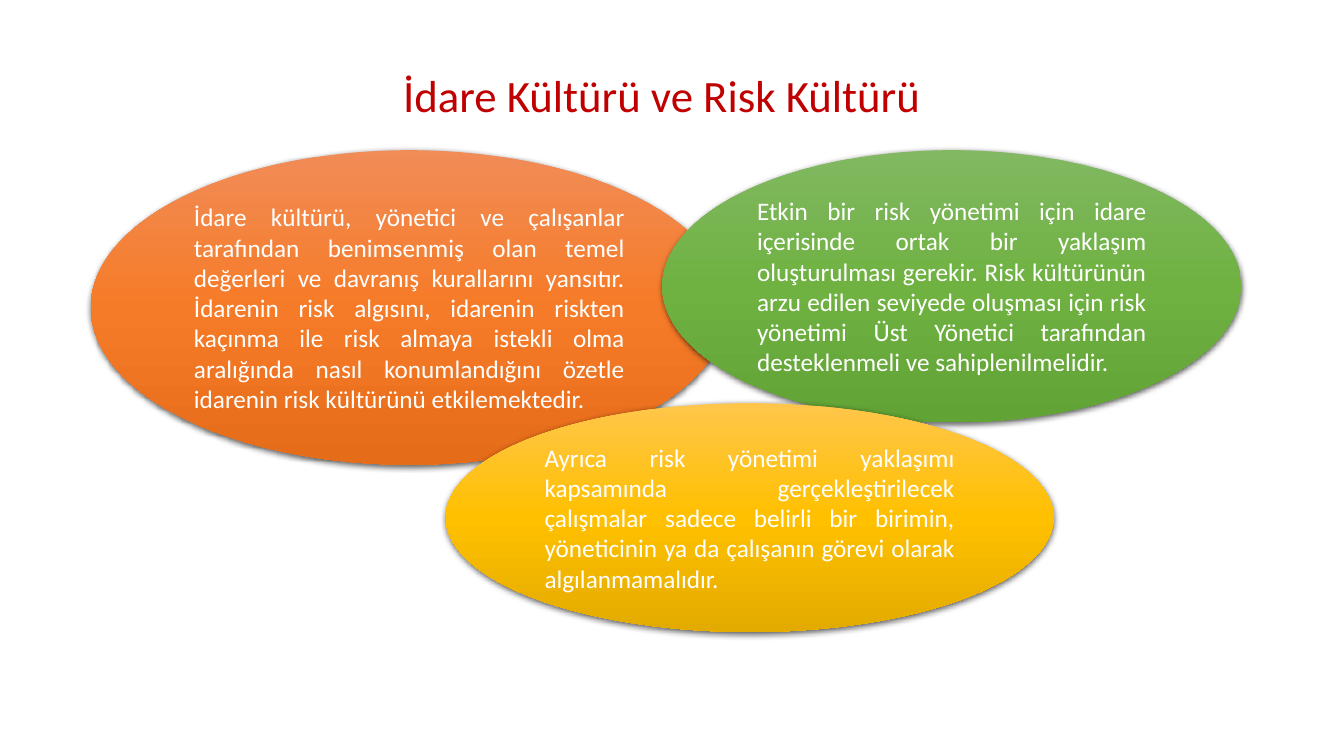
from lxml import etree
from pptx import Presentation
from pptx import util as u
from pptx.dml.color import RGBColor
from pptx.enum import shapes, text
from pptx.oxml.ns import qn

PX = u.Inches(1) // 100
FONT = "Calibri"
COLORS = {
    "title": "C00000",
    "body": "FFFFFF",
    "shadow": "000000",
    "orange": ("F18C57", "F67B28", "E56C19"),
    "green": ("81B861", "6FB242", "62A336"),
    "gold": ("FFC64B", "FFC000", "E3AB00"),
}

ADMINISTRATION_CULTURE = (
    "İdare kültürü, yönetici ve çalışanlar tarafından benimsenmiş olan temel "
    "değerleri ve davranış kurallarını yansıtır. İdarenin risk algısını, idarenin "
    "riskten kaçınma ile risk almaya istekli olma aralığında nasıl "
    "konumlandığını özetle idarenin risk kültürünü etkilemektedir."
)
SHARED_APPROACH = (
    "Etkin bir risk yönetimi için idare içerisinde ortak bir yaklaşım "
    "oluşturulması gerekir. Risk kültürünün arzu edilen seviyede oluşması için "
    "risk yönetimi Üst Yönetici tarafından desteklenmeli ve sahiplenilmelidir."
)
SHARED_DUTY = (
    "Ayrıca risk yönetimi yaklaşımı kapsamında gerçekleştirilecek çalışmalar "
    "sadece belirli bir birimin, yöneticinin ya da çalışanın görevi olarak "
    "algılanmamalıdır."
)


def scaled(place):
    return [length * PX for length in place]


def write(shape, words, size, color, alignment):
    frame = shape.text_frame
    frame.word_wrap = True
    frame.auto_size = text.MSO_AUTO_SIZE.SHAPE_TO_FIT_TEXT
    para = frame.paragraphs[0]
    para.alignment = alignment
    span = para.add_run()
    span.text = words
    span.font.name = FONT
    span.font.size = u.Pt(size)
    span.font.color.rgb = RGBColor.from_string(COLORS[color])


def shade(shape, hexes):
    shape.fill.gradient()
    shape.fill.gradient_angle = 270
    stops = shape.element.spPr.find(f".//{qn('a:gsLst')}")
    stops.clear()
    for index, value in enumerate(hexes):
        stop = etree.SubElement(stops, qn("a:gs"), pos=str(index * 50000))
        etree.SubElement(stop, qn("a:srgbClr"), val=value)


def cast_shadow(shape):
    shape.shadow.inherit = False
    effects = shape.element.spPr.find(qn("a:effectLst"))
    shadow = etree.SubElement(
        effects, qn("a:outerShdw"), blurRad=str(u.Pt(4.5)),
        dist=str(u.Pt(1.5)), dir="5400000", algn="ctr", rotWithShape="0",
    )
    color = etree.SubElement(shadow, qn("a:srgbClr"), val=COLORS["shadow"])
    etree.SubElement(color, qn("a:alpha"), val="63000")


def add_title(page, place, words):
    box = page.shapes.add_textbox(*scaled(place))
    write(box, words, 32, "title", text.PP_ALIGN.LEFT)


def add_ellipse(page, place, color, words):
    ellipse = page.shapes.add_shape(shapes.MSO_SHAPE.OVAL, *scaled(place))
    shade(ellipse, COLORS[color])
    ellipse.line.fill.background()
    cast_shadow(ellipse)
    ellipse.text_frame.vertical_anchor = text.MSO_ANCHOR.MIDDLE
    write(ellipse, words, 18, "body", text.PP_ALIGN.JUSTIFY)


def main():
    deck = Presentation()
    deck.slide_width, deck.slide_height = u.Inches(13.33), u.Inches(7.5)
    page = deck.slides.add_slide(deck.slide_layouts[6])
    add_ellipse(page, (90, 149, 632, 312), "orange", ADMINISTRATION_CULTURE)
    add_ellipse(page, (657, 149, 574, 270), "green", SHARED_APPROACH)
    add_title(page, (390, 62, 554, 64), "İdare Kültürü ve Risk Kültürü")
    add_ellipse(page, (442, 400, 603, 227), "gold", SHARED_DUTY)
    deck.save("out.pptx")


if __name__ == "__main__":
    main()
